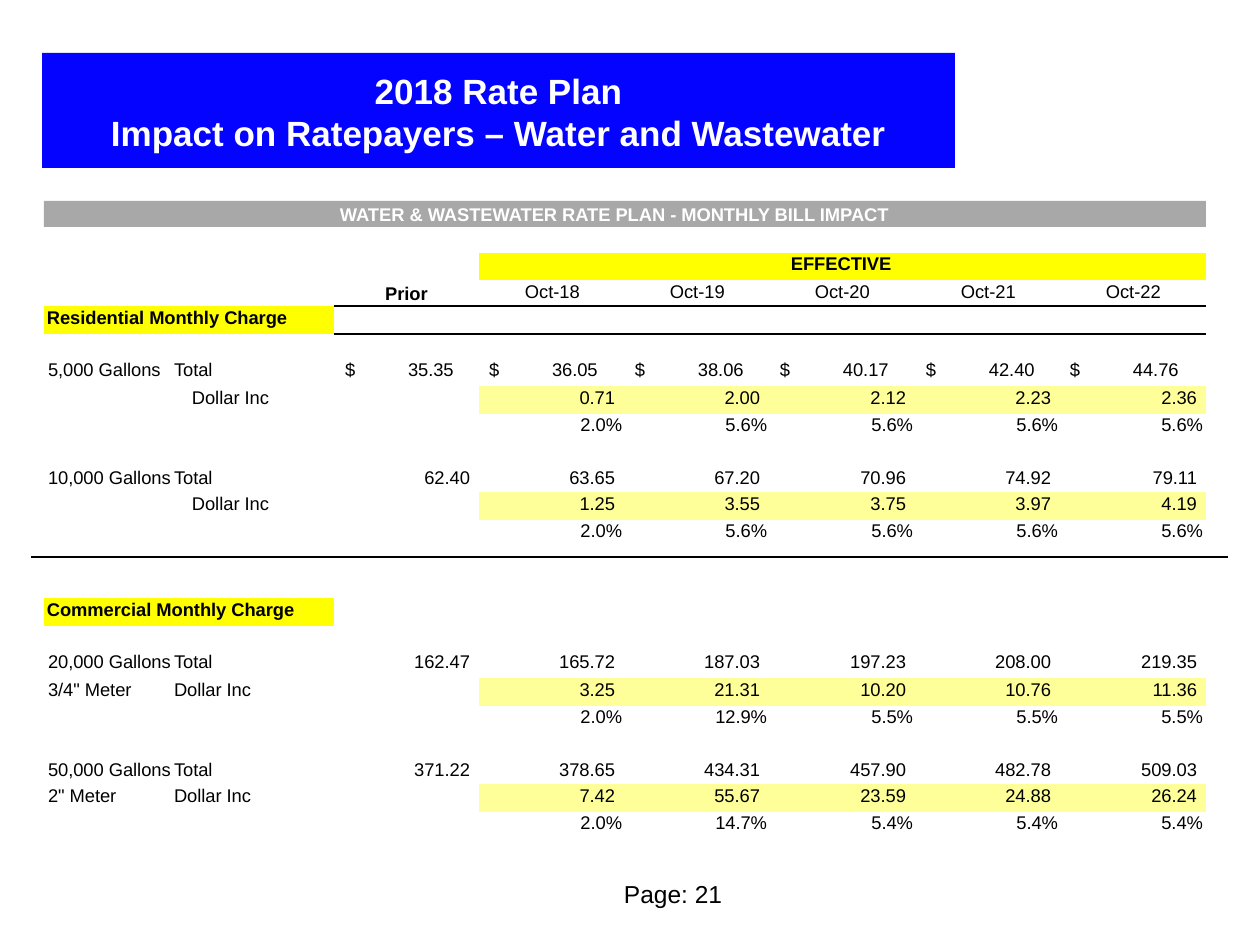
from lxml import etree
from pptx import Presentation
from pptx.dml.color import RGBColor
from pptx.enum.shapes import MSO_CONNECTOR, MSO_SHAPE
from pptx.enum.text import MSO_ANCHOR, PP_ALIGN
from pptx.oxml.ns import qn
from pptx.util import Emu, Pt

SCALE = 914400 / 126
BLUE = RGBColor(0x03, 0x03, 0xFF)
GRAY = RGBColor(0xA7, 0xA8, 0xA7)
YELLOW = RGBColor(0xFF, 0xFF, 0x00)
PALE_YELLOW = RGBColor(0xFF, 0xFF, 0x99)
BLACK = RGBColor(0, 0, 0)
WHITE = RGBColor(0xFF, 0xFF, 0xFF)
NO_STYLE = "{2D5ABB26-0587-4C30-8999-92F81FD0307C}"

COLUMNS = [290, 145, 148, 145, 146, 145, 143]
CHARGE_ROWS = [52, 28, 39, 39, 28]
DOLLAR_INDENTS = [11, 10, 8, 8, 8, 7]
DOLLAR_TABS = [79, 90, 80, 86, 80, 87]
AMOUNT_MARGINS = [9, 12, 12, 12, 12, 9]
PERCENT_MARGINS = [5, 5, 5, 5, 5, 3]
MONTHS = ["Oct-18", "Oct-19", "Oct-20", "Oct-21", "Oct-22"]

RESIDENTIAL = [
    (["5,000 Gallons\tTotal", "Dollar Inc"],
     ["$\t35.35", "$\t36.05", "$\t38.06", "$\t40.17", "$\t42.40", "$\t44.76"],
     ["0.71", "2.00", "2.12", "2.23", "2.36"],
     ["2.0%", "5.6%", "5.6%", "5.6%", "5.6%"]),
    (["10,000 Gallons\tTotal", "Dollar Inc"],
     ["62.40", "63.65", "67.20", "70.96", "74.92", "79.11"],
     ["1.25", "3.55", "3.75", "3.97", "4.19"],
     ["2.0%", "5.6%", "5.6%", "5.6%", "5.6%"]),
]
COMMERCIAL = [
    (["20,000 Gallons\tTotal", "3/4\" Meter\tDollar Inc"],
     ["162.47", "165.72", "187.03", "197.23", "208.00", "219.35"],
     ["3.25", "21.31", "10.20", "10.76", "11.36"],
     ["2.0%", "12.9%", "5.5%", "5.5%", "5.5%"]),
    (["50,000 Gallons\tTotal", "2\" Meter\tDollar Inc"],
     ["371.22", "378.65", "434.31", "457.90", "482.78", "509.03"],
     ["7.42", "55.67", "23.59", "24.88", "26.24"],
     ["2.0%", "14.7%", "5.4%", "5.4%", "5.4%"]),
]


def px(length):
    return Emu(round(length * SCALE))


def set_margins(holder, left=0, top=0, right=0):
    holder.margin_left, holder.margin_top = px(left), px(top)
    holder.margin_right, holder.margin_bottom = px(right), 0


def write(frame, text, size=10.5, color=BLACK, bold=False, align=PP_ALIGN.LEFT,
          tab=None, spacing=None):
    for index, line in enumerate(text.split("\n")):
        paragraph = frame.add_paragraph() if index else frame.paragraphs[0]
        paragraph.alignment = align
        if tab:
            tabs = etree.SubElement(paragraph._p.get_or_add_pPr(), qn("a:tabLst"))
            etree.SubElement(tabs, qn("a:tab"), pos=str(px(tab)), algn="l")
        if spacing:
            paragraph.line_spacing = Pt(spacing)
            paragraph.space_before = Pt(0)
        run = paragraph.add_run()
        run.text = line
        run.font.name = "Arial"
        run.font.size = Pt(size)
        run.font.bold = bold
        run.font.color.rgb = color


def fill_cell(cell, text, left=0, top=0, right=0, **text_format):
    set_margins(cell, left, top, right)
    if left and "\t" in text:
        paragraph_props = cell.text_frame.paragraphs[0]._p.get_or_add_pPr()
        paragraph_props.set("marL", str(px(left)))
        paragraph_props.set("indent", "0")
        cell.margin_left = 0
    write(cell.text_frame, text, **text_format)


def paint(cell, color):
    cell.fill.solid()
    cell.fill.fore_color.rgb = color


def rule_below(cell):
    line = etree.Element(qn("a:lnB"), w=str(Pt(0.75)))
    solid = etree.SubElement(line, qn("a:solidFill"))
    etree.SubElement(solid, qn("a:srgbClr"), val=str(BLACK))
    cell._tc.get_or_add_tcPr().insert(0, line)


def add_grid(slide, left, top, heights):
    frame = slide.shapes.add_table(len(heights), len(COLUMNS), px(left), px(top),
                                   px(sum(COLUMNS)), px(sum(heights)))
    grid = frame.table
    grid.first_row = grid.horz_banding = False
    grid._tbl.tblPr.find(qn("a:tableStyleId")).text = NO_STYLE
    for column, width in zip(grid.columns, COLUMNS):
        column.width = px(width)
    for row, height in zip(grid.rows, heights):
        row.height = px(height)
        for cell in row.cells:
            set_margins(cell)
            cell.fill.background()
    return grid


def finish_grid(grid):
    for cell in grid.iter_cells():
        if not cell.text_frame.text:
            etree.SubElement(cell.text_frame.paragraphs[0]._p,
                             qn("a:endParaRPr"), sz="1050")


def fill_charges(grid, first_row, heading, charges):
    paint(grid.cell(first_row, 0), YELLOW)
    fill_cell(grid.cell(first_row, 0), heading, left=3, top=2, bold=True)
    for number, (labels, totals, increases, percents) in enumerate(charges):
        row = first_row + 1 + 3 * number
        total_top = 15 if number else 26
        fill_cell(grid.cell(row, 0), labels[0], left=4, top=total_top, tab=148)
        label_left = 4 if "\t" in labels[1] else 148
        fill_cell(grid.cell(row + 1, 0), labels[1], left=label_left, top=2,
                  tab=148 if label_left == 4 else None)
        for column, total in enumerate(totals):
            cell = grid.cell(row, column + 1)
            if "\t" in total:
                fill_cell(cell, total, left=DOLLAR_INDENTS[column], top=total_top,
                          tab=DOLLAR_TABS[column])
            else:
                fill_cell(cell, total, top=total_top, right=AMOUNT_MARGINS[column],
                          align=PP_ALIGN.RIGHT)
        for column, (increase, percent) in enumerate(zip(increases, percents), 1):
            increase_cell = grid.cell(row + 1, column + 1)
            paint(increase_cell, PALE_YELLOW)
            fill_cell(increase_cell, increase, top=2, right=AMOUNT_MARGINS[column],
                      align=PP_ALIGN.RIGHT)
            fill_cell(grid.cell(row + 2, column + 1), percent, top=1,
                      right=PERCENT_MARGINS[column], align=PP_ALIGN.RIGHT)


def add_residential(slide, left, top):
    grid = add_grid(slide, left, top, [27, 26, 28] + CHARGE_ROWS + [37])
    grid.cell(0, 0).merge(grid.cell(1, 0))
    grid.cell(0, 5).merge(grid.cell(0, 6))
    for column in range(2, 7):
        paint(grid.cell(0, column), YELLOW)
    fill_cell(grid.cell(0, 4), "EFFECTIVE", left=19, top=1, bold=True)
    fill_cell(grid.cell(1, 1), "Prior", top=4, bold=True, align=PP_ALIGN.CENTER)
    for column, month in enumerate(MONTHS, 2):
        fill_cell(grid.cell(1, column), month, left=46 if column == 2 else 43, top=2)
    for column in range(1, 7):
        rule_below(grid.cell(1, column))
        rule_below(grid.cell(2, column))
    fill_charges(grid, 2, "Residential Monthly Charge", RESIDENTIAL)
    finish_grid(grid)


def add_commercial(slide, left, top):
    grid = add_grid(slide, left, top, [28] + CHARGE_ROWS + [24])
    grid.cell(0, 1).merge(grid.cell(0, 6))
    fill_charges(grid, 0, "Commercial Monthly Charge", COMMERCIAL)
    finish_grid(grid)


def add_title(slide, left, top, width, height):
    title = slide.shapes.title
    title.left, title.top, title.width, title.height = map(px, (left, top, width, height))
    paint(title, BLUE)
    set_margins(title.text_frame, top=16)
    title.text_frame.vertical_anchor = MSO_ANCHOR.TOP
    write(title.text_frame, "2018 Rate Plan\nImpact on Ratepayers – Water and Wastewater",
          size=20, color=WHITE, bold=True, align=PP_ALIGN.CENTER, spacing=24)


def add_banner(slide, left, top, width, height):
    banner = slide.shapes.add_shape(MSO_SHAPE.RECTANGLE, *map(px, (left, top, width, height)))
    banner.shadow.inherit = False
    paint(banner, GRAY)
    banner.line.fill.background()
    set_margins(banner.text_frame, left=296, top=2)
    banner.text_frame.vertical_anchor = MSO_ANCHOR.TOP
    write(banner.text_frame, "WATER & WASTEWATER RATE PLAN - MONTHLY BILL IMPACT",
          color=WHITE, bold=True)


def add_divider(slide, left, top, width):
    divider = slide.shapes.add_connector(MSO_CONNECTOR.STRAIGHT, px(left), px(top),
                                         px(left + width), px(top))
    divider.line.color.rgb = BLACK
    divider.line.width = Pt(1)
    etree.SubElement(divider._element.spPr, qn("a:effectLst"))


def add_page_number(slide, left, top, width, height):
    page = slide.shapes.add_textbox(*map(px, (left, top, width, height)))
    page.text_frame.word_wrap = True
    set_margins(page.text_frame, left=1)
    write(page.text_frame, "Page: 21", size=14)


def main():
    deck = Presentation()
    deck.slide_width, deck.slide_height = px(1260), px(945)
    slide = deck.slides.add_slide(deck.slide_layouts[5])
    add_title(slide, 42, 53, 913, 115)
    add_divider(slide, 31, 557, 1197)
    add_commercial(slide, 44, 598)
    add_page_number(slide, 623, 879, 103, 32)
    add_banner(slide, 44, 201, 1162, 26)
    add_residential(slide, 44, 253)
    deck.save("out.pptx")


if __name__ == "__main__":
    main()
